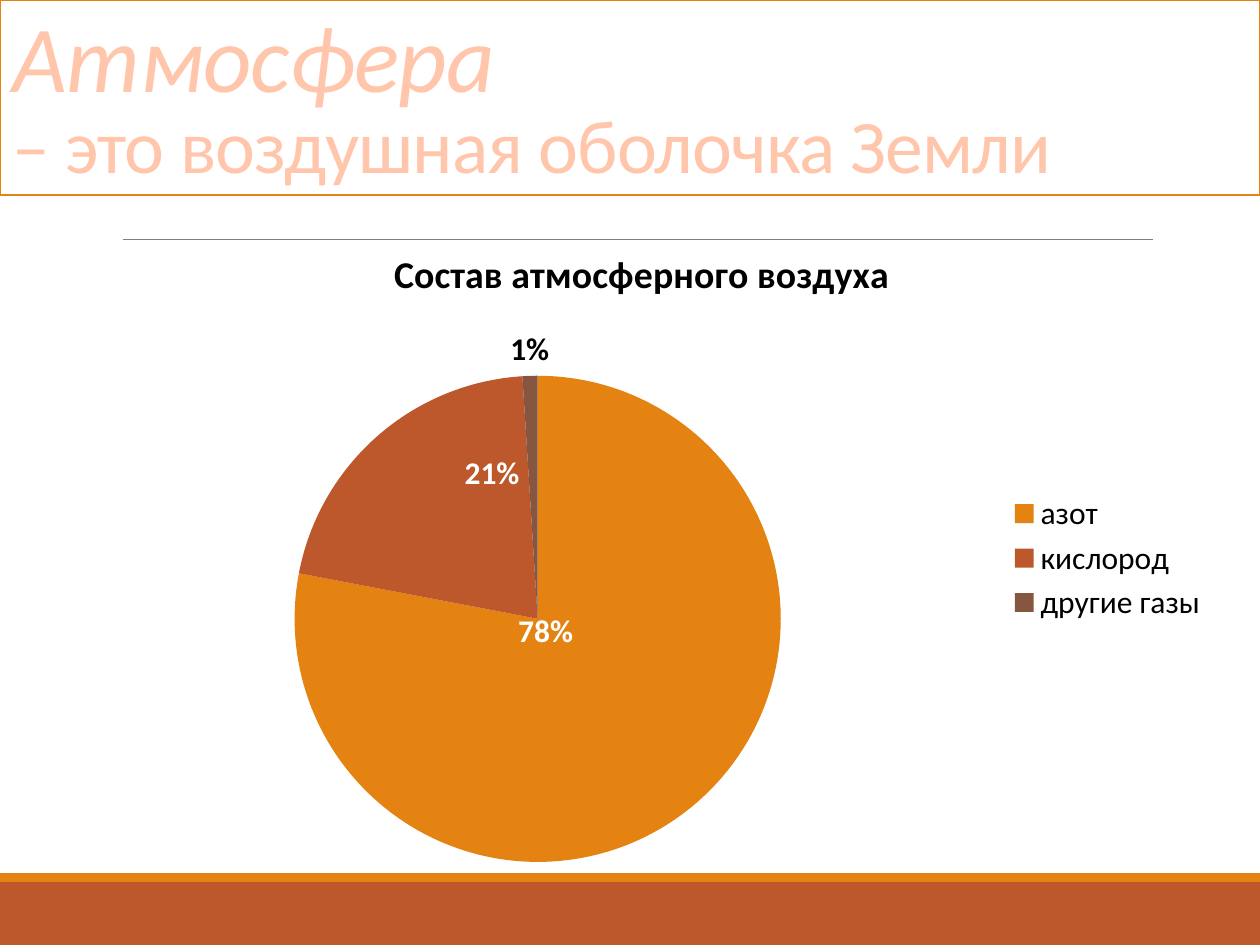
from dataclasses import dataclass

from lxml.etree import SubElement as Sub
from pptx import Presentation
from pptx.chart.chart import Chart
from pptx.chart.data import CategoryChartData as Data
from pptx.dml.color import RGBColor as RGB
from pptx.enum.chart import XL_CHART_TYPE as Kind
from pptx.enum.chart import XL_LABEL_POSITION as Spot
from pptx.enum.chart import XL_LEGEND_POSITION as Side
from pptx.enum.shapes import MSO_CONNECTOR as Link
from pptx.enum.shapes import MSO_SHAPE as Form
from pptx.enum.text import MSO_ANCHOR as Anchor
from pptx.enum.text import PP_ALIGN as Align
from pptx.oxml import parse_xml
from pptx.oxml.ns import nsdecls, qn
from pptx.util import Inches, Pt

ORANGE = RGB(0xE4, 0x83, 0x12)
RUST = RGB(0xBD, 0x58, 0x2C)
BROWN = RGB(0x86, 0x56, 0x40)
PEACH = RGB(0xFF, 0xC6, 0xAC)
GRAY = RGB(0x80, 0x80, 0x80)
WHITE = RGB(0xFF, 0xFF, 0xFF)
BLACK = RGB(0, 0, 0)
FONT = "Calibri"
TOPIC = "Состав атмосферного воздуха"


@dataclass
class Band:
    top: float
    height: float
    fill: RGB


@dataclass
class Gas:
    name: str
    share: int
    fill: RGB
    ink: RGB
    spot: Spot
    shift: tuple[float, float] | None = None


BANDS = [Band(7, 0.5, RUST), Band(6.93, 0.07, ORANGE)]
GASES = [
    Gas("азот", 78, ORANGE, WHITE, Spot.CENTER, (-0.06, -0.12)),
    Gas("кислород", 21, RUST, WHITE, Spot.CENTER, (0.03, -0.08)),
    Gas("другие газы", 1, BROWN, BLACK, Spot.OUTSIDE_END),
]


def draw_band(shapes, band: Band):
    box = shapes.add_shape(Form.RECTANGLE, 0, Inches(band.top), Inches(10), Inches(band.height))
    box.shadow.inherit = False
    box.fill.solid()
    box.fill.fore_color.rgb = band.fill
    box.line.fill.background()
    return box


def draw_rule(shapes) -> None:
    rule = shapes.add_connector(Link.STRAIGHT, Inches(0.98), Inches(1.9), Inches(9.15), Inches(1.9))
    rule.line.color.rgb = GRAY
    rule.line.width = Pt(0.5)
    Sub(rule._element.spPr, qn("a:effectLst"))


def draw_title(shapes) -> None:
    box = draw_band(shapes, Band(0, 1.55, WHITE))
    box.line.color.rgb = ORANGE
    box.line.width = Pt(1.25)
    frame = box.text_frame
    frame.word_wrap = True
    frame.vertical_anchor = Anchor.BOTTOM
    para = frame.paragraphs[0]
    para.alignment = Align.LEFT
    para.line_spacing = 0.85
    head = para.add_run()
    head.text = "Атмосфера"
    para.add_line_break()
    tail = para.add_run()
    tail.text = "– это воздушная оболочка Земли"
    for run, size in ((head, 54), (tail, 43.2)):
        run.font.name = FONT
        run.font.size = Pt(size)
        run.font.italic = run is head
        run.font.color.rgb = PEACH
        run.font._element.set("spc", "-50")


def make_layout(**parts):
    inner = "".join(f'<c:{key} val="{val}"/>' for key, val in parts.items())
    return parse_xml(
        f'<c:layout {nsdecls("c")}><c:manualLayout>{inner}</c:manualLayout></c:layout>'
    )


def style_slice(chart: Chart, index: int, gas: Gas) -> None:
    point = chart.plots[0].series[0].points[index]
    point.format.fill.solid()
    point.format.fill.fore_color.rgb = gas.fill
    label = point.data_label
    label.font.name = FONT
    label.font.size = Pt(18)
    label.font.bold = True
    label.font.color.rgb = gas.ink
    label.position = gas.spot
    node = chart._chartSpace.xpath(f".//c:dLbl[c:idx/@val={index}]")[0]
    node.find(qn("c:showVal")).set("val", "0")
    node.find(qn("c:showPercent")).set("val", "1")
    if gas.shift:
        x, y = gas.shift
        node.find(qn("c:idx")).addnext(make_layout(x=x, y=y))


def draw_pie(shapes) -> None:
    data = Data()
    data.categories = [gas.name for gas in GASES]
    data.add_series(TOPIC, [gas.share for gas in GASES])
    chart = shapes.add_chart(
        Kind.PIE, Inches(0.5), Inches(1.75), Inches(9.19), Inches(5.36), data
    ).chart
    chart.font.name = FONT
    chart.font.size = Pt(18)
    chart.font.color.rgb = BLACK
    chart.has_title = True
    title = chart.chart_title.text_frame
    title.text = TOPIC
    font = title.paragraphs[0].font
    font.name = FONT
    font.size = Pt(21.6)
    font.bold = True
    font.color.rgb = BLACK
    chart.has_legend = True
    chart.legend.position = Side.RIGHT
    chart.legend.include_in_layout = False
    plot = chart.plots[0]
    plot.vary_by_categories = True
    plot.has_data_labels = True
    labels = plot.data_labels
    labels.show_percentage = True
    labels.show_value = False
    labels.number_format = "0%"
    labels.number_format_is_linked = False
    for index, gas in enumerate(GASES):
        style_slice(chart, index, gas)
    area = chart._chartSpace.xpath(".//c:plotArea")[0]
    for old in area.findall(qn("c:layout")):
        area.remove(old)
    area.insert(0, make_layout(
        layoutTarget="inner", xMode="edge", yMode="edge", x=0.2, y=0.23, w=0.42, h=0.72
    ))


def main() -> None:
    deck = Presentation()
    deck.slide_width = Inches(10)
    deck.slide_height = Inches(7.5)
    shapes = deck.slides.add_slide(deck.slide_layouts[6]).shapes
    for band in BANDS:
        draw_band(shapes, band)
    draw_rule(shapes)
    draw_title(shapes)
    draw_pie(shapes)
    deck.save("out.pptx")


if __name__ == "__main__":
    main()
